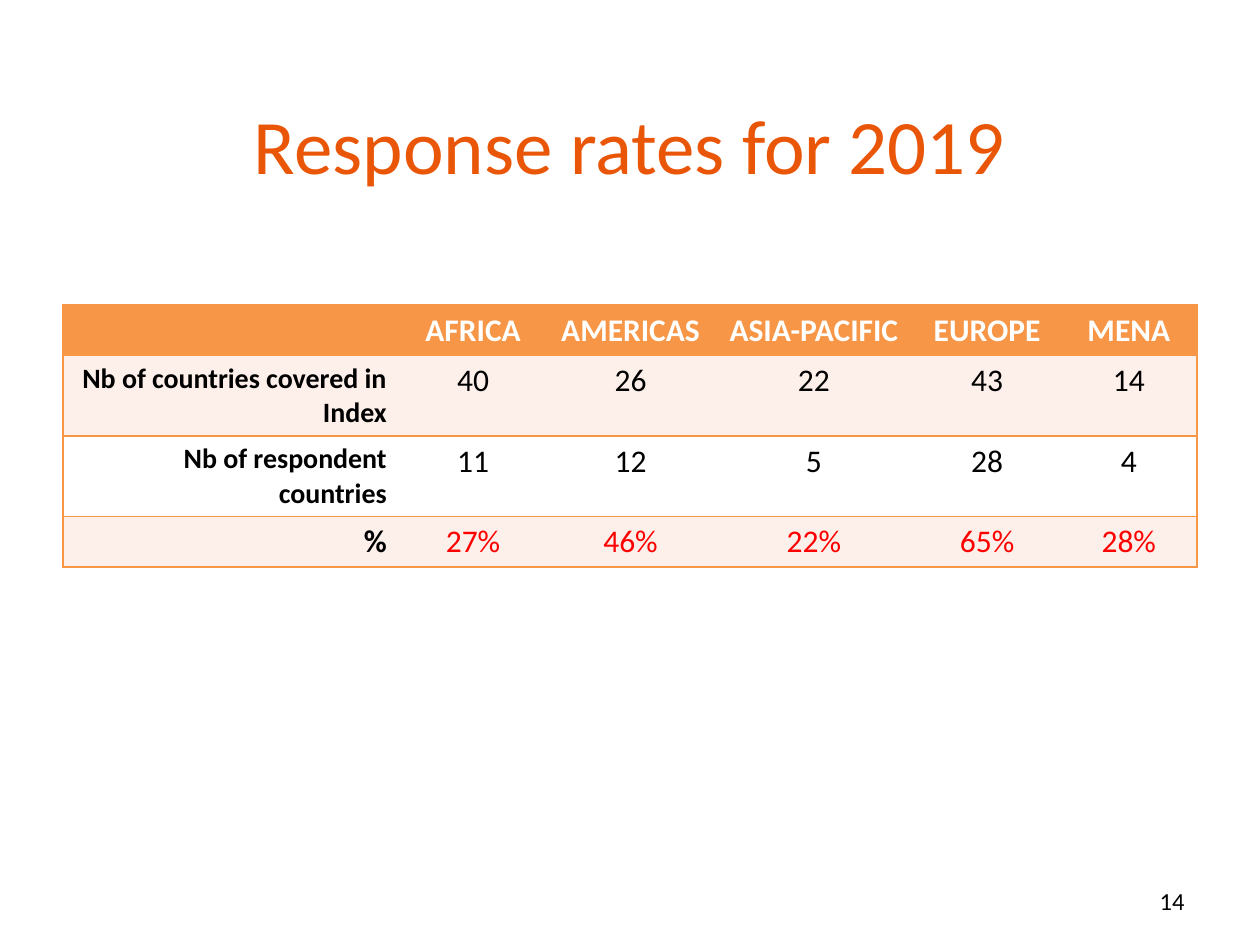
from typing import NamedTuple

from lxml import etree
from pptx import Presentation
from pptx.dml.color import RGBColor
from pptx.enum.text import MSO_ANCHOR, PP_ALIGN
from pptx.oxml.ns import qn
from pptx.util import Inches, Pt

LEFT, CENTER, RIGHT = PP_ALIGN.LEFT, PP_ALIGN.CENTER, PP_ALIGN.RIGHT
MIDDLE = MSO_ANCHOR.MIDDLE

FONT = "Calibri"
COLORS = {
    "title": "EA5608",
    "head": "F79646",
    "band": "FDEFE9",
    "plain": "FFFFFF",
    "text": "000000",
    "rate": "FF0000",
}


class Style(NamedTuple):
    size: int
    color: str
    align: PP_ALIGN
    bold: bool = False


class Row(NamedTuple):
    label: str
    values: list[str]
    height: float
    fill: str
    first: Style
    rest: Style


class Box(NamedTuple):
    text: str
    left: float
    top: float
    width: float
    height: float
    style: Style


HEAD = Style(18, "plain", CENTER, True)
COUNT = Style(18, "text", CENTER)
RATE = Style(18, "rate", CENTER)
LABEL = Style(16, "text", RIGHT, True)
TOTAL = Style(18, "text", RIGHT, True)

WIDTHS = [2.67, 1.17, 1.33, 1.58, 1.17, 1.08]
ROWS = [
    Row("", ["AFRICA", "AMERICAS", "ASIA-PACIFIC", "EUROPE", "MENA"],
        0.4, "head", HEAD, HEAD),
    Row("Nb of countries covered in Index", ["40", "26", "22", "43", "14"],
        0.64, "band", LABEL, COUNT),
    Row("Nb of respondent countries", ["11", "12", "5", "28", "4"],
        0.64, "plain", LABEL, COUNT),
    Row("%", ["27%", "46%", "22%", "65%", "28%"],
        0.4, "band", TOTAL, RATE),
]
BOXES = [
    Box("Response rates for 2019", 0.5, 0.72, 9, 0.84,
        Style(44, "title", CENTER)),
    Box("14", 7.17, 6.95, 2.33, 0.4, Style(14, "text", RIGHT)),
]


def rgb(name: str) -> RGBColor:
    return RGBColor.from_string(COLORS[name])


def write(frame, text: str, style: Style) -> None:
    para = frame.paragraphs[0]
    para.alignment = style.align
    if not text:
        return
    run = para.add_run()
    run.text = text
    run.font.name = FONT
    run.font.size = Pt(style.size)
    run.font.bold = style.bold
    run.font.color.rgb = rgb(style.color)


def add_box(slide, box: Box) -> None:
    shape = slide.shapes.add_textbox(
        Inches(box.left), Inches(box.top), Inches(box.width), Inches(box.height))
    frame = shape.text_frame
    frame.word_wrap = True
    frame.vertical_anchor = MIDDLE
    write(frame, box.text, box.style)


def set_edges(cell, shown: str) -> None:
    """Draw the named sides (L, R, T, B) and clear the others."""
    props = cell._tc.get_or_add_tcPr()
    for side in "LRTB":
        line = etree.SubElement(props, qn(f"a:ln{side}"), w=str(Pt(1)))
        if side in shown:
            fill = etree.SubElement(line, qn("a:solidFill"))
            etree.SubElement(fill, qn("a:srgbClr"), val=COLORS["head"])
        else:
            etree.SubElement(line, qn("a:noFill"))


def add_grid(slide, rows: list[Row], widths: list[float]) -> None:
    height = sum(row.height for row in rows)
    table = slide.shapes.add_table(
        len(rows), len(widths), Inches(0.5), Inches(2.42),
        Inches(sum(widths)), Inches(height)).table
    for col, width in zip(table.columns, widths):
        col.width = Inches(width)
    last = len(widths) - 1
    for line, row in zip(table.rows, rows):
        line.height = Inches(row.height)
        for i, text in enumerate([row.label, *row.values]):
            cell = line.cells[i]
            set_edges(cell, "TB" + {0: "L", last: "R"}.get(i, ""))
            cell.fill.solid()
            cell.fill.fore_color.rgb = rgb(row.fill)
            write(cell.text_frame, text, row.rest if i else row.first)


def main() -> None:
    deck = Presentation()
    deck.slide_width, deck.slide_height = Inches(10), Inches(7.5)
    slide = deck.slides.add_slide(deck.slide_layouts[6])

    # Title and page number
    for box in BOXES:
        add_box(slide, box)

    # Response table
    add_grid(slide, ROWS, WIDTHS)

    deck.save("out.pptx")


if __name__ == "__main__":
    main()
